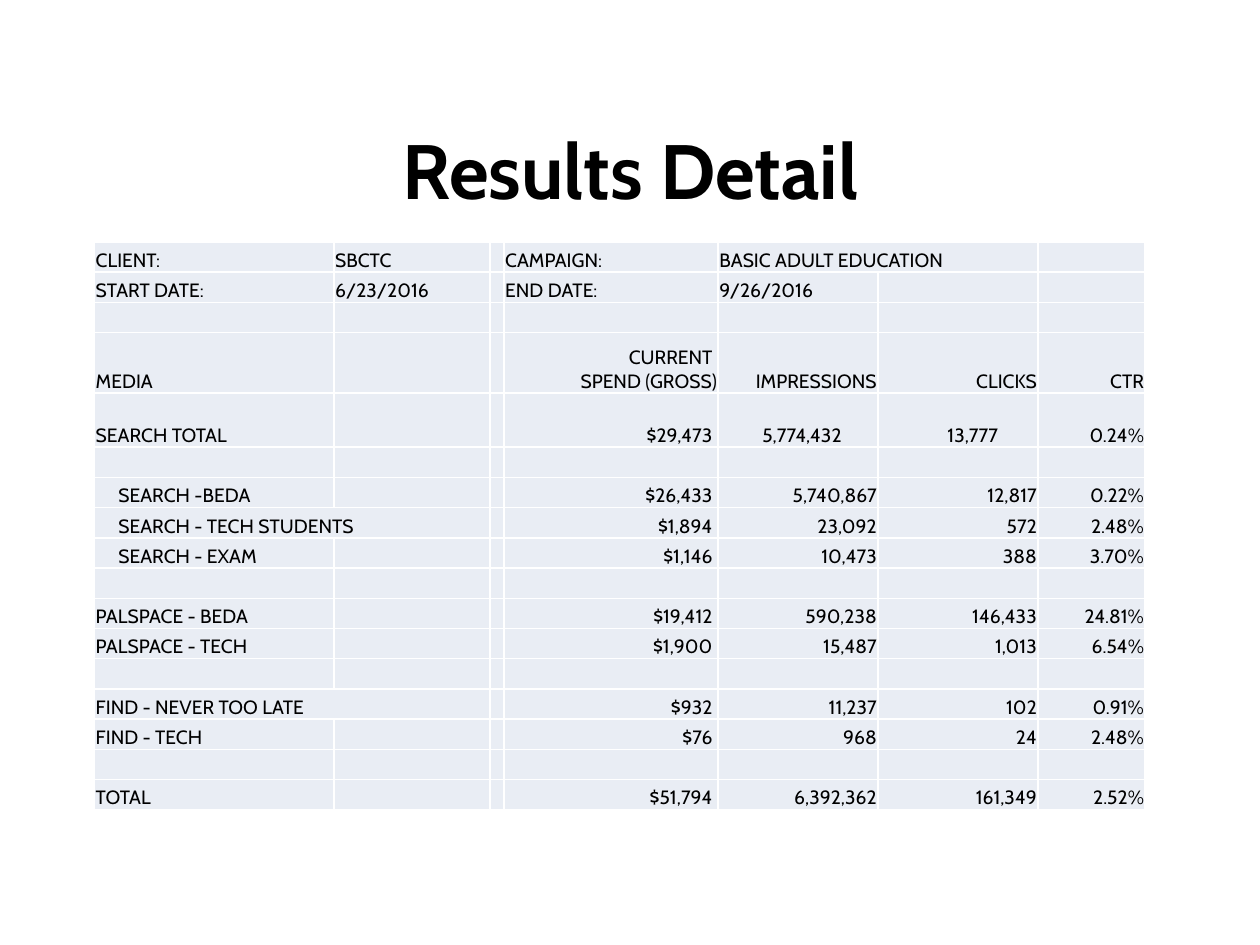
from dataclasses import dataclass

from lxml import etree
from pptx import Presentation
from pptx.dml.color import RGBColor
from pptx.enum import text
from pptx.oxml import ns
from pptx.util import Pt

PX = 9144
FONT = "Cabin"
BLACK = RGBColor(0x00, 0x00, 0x00)
WHITE = RGBColor(0xFF, 0xFF, 0xFF)
PALE_BLUE = RGBColor(0xE9, 0xED, 0xF4)
TEXT_SIZE = Pt(11)
COLUMNS = (190, 124, 11, 170, 127, 127, 85)
FIRST_FIGURE = 3
LEFT, RIGHT = text.PP_ALIGN.LEFT, text.PP_ALIGN.RIGHT


@dataclass(frozen=True)
class Row:
    cells: tuple[str, ...] = ("",) * len(COLUMNS)
    height: int = 24
    merge_from: int | None = None
    figures: bool = True
    indents: tuple[tuple[int, int], ...] = ()


def media(name: str, spend: str, impressions: str, clicks: str, ctr: str, **options) -> Row:
    return Row((name, "", "", spend, impressions, clicks, ctr), **options)


SUB_ITEM = ((0, 19),)
ROWS = (
    Row(("CLIENT:", "SBCTC", "", "CAMPAIGN:", "BASIC ADULT EDUCATION", "", ""),
        merge_from=4, figures=False),
    Row(("START DATE:", "6/23/2016", "", "END DATE:", "9/26/2016", "", ""), figures=False),
    Row(),
    media("MEDIA", "CURRENT \vSPEND (GROSS)", "IMPRESSIONS", "CLICKS", "CTR", height=48),
    media("SEARCH TOTAL", "$29,473 ", "5,774,432", "13,777", "0.24%",
          height=43, indents=((4, 35), (5, 55))),
    Row(),
    media("SEARCH -BEDA", "$26,433 ", "5,740,867", "12,817", "0.22%", indents=SUB_ITEM),
    media("SEARCH - TECH STUDENTS", "$1,894 ", "23,092", "572", "2.48%",
          merge_from=0, indents=SUB_ITEM),
    media("SEARCH - EXAM", "$1,146 ", "10,473", "388", "3.70%", indents=SUB_ITEM),
    Row(),
    media("PALSPACE - BEDA", "$19,412 ", "590,238", "146,433", "24.81%"),
    media("PALSPACE - TECH", "$1,900 ", "15,487", "1,013", "6.54%"),
    Row(),
    media("FIND - NEVER TOO LATE", "$932 ", "11,237", "102", "0.91%", merge_from=0),
    media("FIND - TECH", "$76 ", "968", "24", "2.48%"),
    Row(),
    media("TOTAL", "$51,794 ", "6,392,362", "161,349", "2.52%"),
)


def set_font(p, size: int, bold: bool) -> None:
    p.font.name = FONT
    p.font.size = size
    p.font.bold = bold
    p.font.color.rgb = BLACK


def add_borders(cell, color: RGBColor, width: int) -> None:
    tc_pr = cell._tc.get_or_add_tcPr()
    for i, side in enumerate(("lnL", "lnR", "lnT", "lnB")):
        ln = etree.Element(ns.qn(f"a:{side}"), w=str(width))
        fill = etree.SubElement(ln, ns.qn("a:solidFill"))
        etree.SubElement(fill, ns.qn("a:srgbClr"), val=str(color))
        tc_pr.insert(i, ln)


def fill_cell(cell, value: str, align: text.PP_ALIGN, indent: int) -> None:
    cell.margin_left = indent * PX
    cell.margin_right = cell.margin_top = PX
    cell.margin_bottom = 0
    cell.vertical_anchor = text.MSO_ANCHOR.BOTTOM
    cell.fill.solid()
    cell.fill.fore_color.rgb = PALE_BLUE
    add_borders(cell, WHITE, Pt(1))
    p = cell.text_frame.paragraphs[0]
    if value:
        p.text = value
    else:
        etree.SubElement(p._p, ns.qn("a:endParaRPr"), sz=str(int(TEXT_SIZE.pt * 100)))
    p.alignment = align
    set_font(p, TEXT_SIZE, False)


def add_title(slide, value: str) -> None:
    sp = slide.shapes.title
    sp.left, sp.top, sp.width, sp.height = (n * PX for n in (117, 92, 767, 83))
    tf = sp.text_frame
    tf.text = value
    tf.vertical_anchor = text.MSO_ANCHOR.MIDDLE
    p = tf.paragraphs[0]
    p.alignment = text.PP_ALIGN.CENTER
    set_font(p, Pt(44), True)


def add_results(slide, left: int, top: int) -> None:
    height = sum(row.height for row in ROWS)
    table = slide.shapes.add_table(len(ROWS), len(COLUMNS), left * PX, top * PX,
                                   sum(COLUMNS) * PX, height * PX).table
    table.first_row = table.horz_banding = False
    for column, width in zip(table.columns, COLUMNS):
        column.width = width * PX
    for r, row in enumerate(ROWS):
        table.rows[r].height = row.height * PX
        indents = dict(row.indents)
        for c, value in enumerate(row.cells):
            right = row.figures and c >= FIRST_FIGURE and c not in indents
            fill_cell(table.cell(r, c), value, RIGHT if right else LEFT, indents.get(c, 1))
        if row.merge_from is not None:
            table.cell(r, row.merge_from).merge(table.cell(r, row.merge_from + 1))


def main() -> None:
    prs = Presentation()
    prs.slide_width, prs.slide_height = 1000 * PX, 750 * PX
    slide = prs.slides.add_slide(prs.slide_layouts[5])
    add_title(slide, "Results Detail")
    add_results(slide, 75, 192)
    prs.save("out.pptx")


if __name__ == "__main__":
    main()
